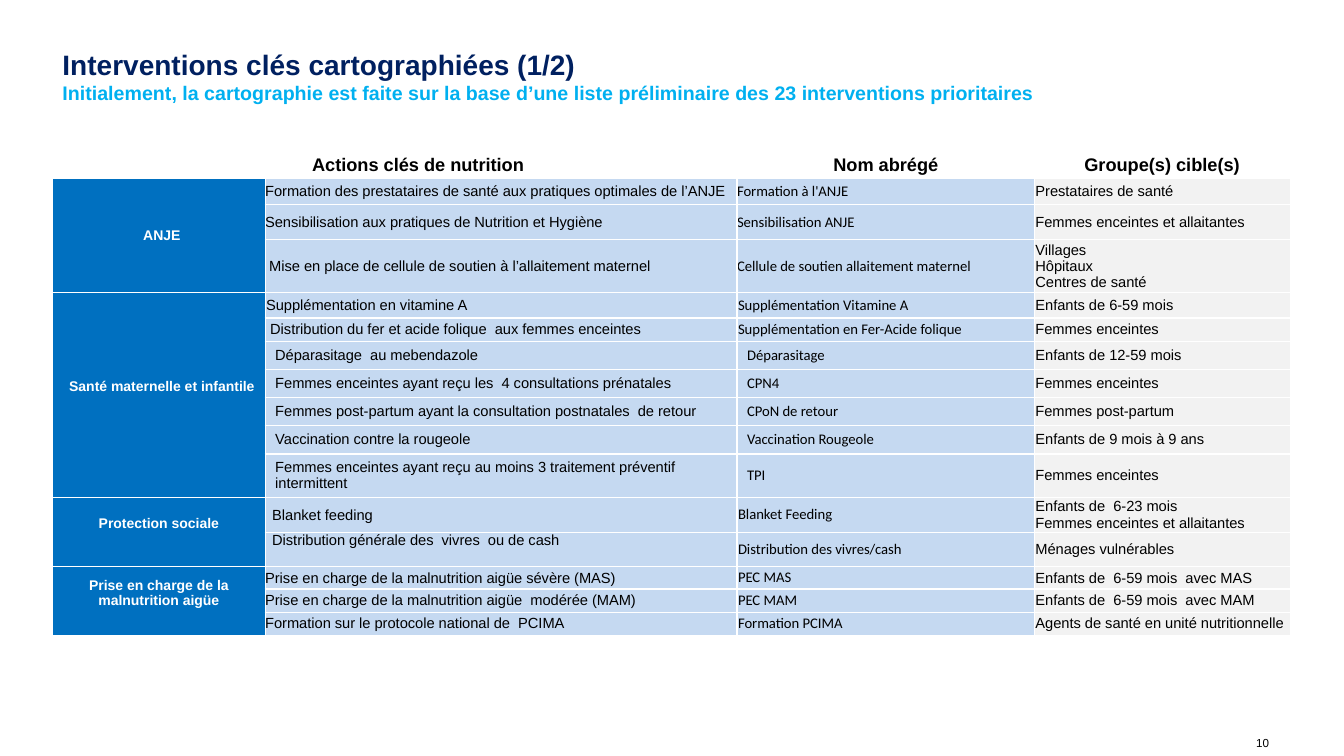
import pptx
import pptx.dml.color
import pptx.enum.text
import pptx.oxml.ns
import pptx.util
import lxml.etree

Inches = pptx.util.Inches
Pt = pptx.util.Pt
ALIGN = pptx.enum.text.PP_ALIGN
ANCHOR = pptx.enum.text.MSO_ANCHOR
COLORS = {
    "title": "002060", "subtitle": "00B0F0", "text": "000000", "white": "FFFFFF",
    "group": "0070C0", "action": "C5D9F1", "target": "F2F2F2",
}
COLUMN_WIDTHS = [2.11, 4.68, 2.95, 2.54]
HEADER_HEIGHT = 0.26
HEADERS = [("", 0), ("Actions clés de nutrition", 1.65), ("Nom abrégé", 0), ("Groupe(s) cible(s)", 0.01)]
# Each group: label, left inset, bottom inset, rows of
# (height, action inset, short-name inset, action, short name, target).
GROUPS = [
    ("ANJE", 0.07, 0, [
        (0.26, 0, 0, "Formation des prestataires de santé aux pratiques optimales de l’ANJE",
         "Formation à l'ANJE", "Prestataires de santé"),
        (0.35, 0, 0, "Sensibilisation aux pratiques de Nutrition et Hygiène",
         "Sensibilisation ANJE", "Femmes enceintes et allaitantes"),
        (0.5, 0.04, 0, "Mise en place de cellule de soutien à l’allaitement maternel",
         "Cellule de soutien allaitement maternel", "Villages\nHôpitaux\nCentres de santé"),
    ]),
    ("Santé maternelle et infantile", 0.07, 0.16, [
        (0.25, 0.01, 0.01, "Supplémentation en vitamine A",
         "Supplémentation Vitamine A", "Enfants de 6-59 mois"),
        (0.23, 0.05, 0.01, "Distribution du fer et acide folique  aux femmes enceintes",
         "Supplémentation en Fer-Acide folique", "Femmes enceintes"),
        (0.28, 0.1, 0.1, "Déparasitage  au mebendazole", "Déparasitage", "Enfants de 12-59 mois"),
        (0.28, 0.1, 0.1, "Femmes enceintes ayant reçu les  4 consultations prénatales",
         "CPN4", "Femmes enceintes"),
        (0.28, 0.1, 0.1, "Femmes post-partum ayant la consultation postnatales  de retour",
         "CPoN de retour", "Femmes post-partum"),
        (0.28, 0.1, 0.1, "Vaccination contre la rougeole",
         "Vaccination Rougeole", "Enfants de 9 mois à 9 ans"),
        (0.43, 0.1, 0.1, "Femmes enceintes ayant reçu au moins 3 traitement préventif intermittent",
         "TPI", "Femmes enceintes"),
    ]),
    ("Protection sociale", 0.01, 0.16, [
        (0.35, 0.07, 0.01, "Blanket feeding", "Blanket Feeding",
         "Enfants de  6-23 mois\nFemmes enceintes et allaitantes"),
        (0.34, 0.07, 0.01, "Distribution générale des  vivres  ou de cash",
         "Distribution des vivres/cash", "Ménages vulnérables"),
    ]),
    ("Prise en charge de la malnutrition aigüe", 0.01, 0.16, [
        (0.22, 0, 0.01, "Prise en charge de la malnutrition aigüe sévère (MAS)",
         "PEC MAS", "Enfants de  6-59 mois  avec MAS"),
        (0.23, 0, 0.01, "Prise en charge de la malnutrition aigüe  modérée (MAM)",
         "PEC MAM", "Enfants de  6-59 mois  avec MAM"),
        (0.23, 0, 0.01, "Formation sur le protocole national de  PCIMA",
         "Formation PCIMA", "Agents de santé en unité nutritionnelle"),
    ]),
]
TOP_ALIGNED = "Distribution générale des  vivres  ou de cash"


def rgb(name):
    """Return the named colour."""
    return pptx.dml.color.RGBColor.from_string(COLORS[name])


def style(span, size, color="text", bold=False, font="Arial"):
    """Set the font of one run."""
    span.font.name = font
    span.font.size = Pt(size)
    span.font.bold = bold
    span.font.color.rgb = rgb(color)


def add_text(page, box, text, looks, anchor, inset=0, wrap=True):
    """Add a text box whose successive runs take the given looks."""
    frame = page.shapes.add_textbox(*map(Inches, box)).text_frame
    frame.word_wrap = wrap
    frame.vertical_anchor = anchor
    frame.margin_left = frame.margin_right = 0
    frame.margin_top = frame.margin_bottom = Inches(inset)
    frame.text = text
    for span, look in zip(frame.paragraphs[0].runs, looks):
        style(span, *look)


def add_borders(cell):
    """Draw thin white lines on the four sides of a cell."""
    properties = cell._tc.get_or_add_tcPr()
    for index, side in enumerate(("lnL", "lnR", "lnT", "lnB")):
        line = lxml.etree.Element(pptx.oxml.ns.qn("a:" + side), w=str(Pt(1)))
        fill = lxml.etree.SubElement(line, pptx.oxml.ns.qn("a:solidFill"))
        lxml.etree.SubElement(fill, pptx.oxml.ns.qn("a:srgbClr"), val=COLORS["white"])
        properties.insert(index, line)


def fill_cell(cell, text, look, fill=None, left=0.01, right=0.01, bottom=0, align=ALIGN.LEFT):
    """Write and format one table cell."""
    cell.text = text
    cell.vertical_anchor = ANCHOR.TOP if text == TOP_ALIGNED else ANCHOR.MIDDLE
    cell.margin_left, cell.margin_right = Inches(left), Inches(right)
    cell.margin_top, cell.margin_bottom = 0, Inches(bottom)
    for para in cell.text_frame.paragraphs:
        para.alignment = align
        for span in para.runs:
            style(span, *look)
        if not text:
            lxml.etree.SubElement(para._p, pptx.oxml.ns.qn("a:endParaRPr"), sz="1000")
    if fill:
        cell.fill.solid()
        cell.fill.fore_color.rgb = rgb(fill)
    else:
        cell.fill.background()
    add_borders(cell)


def add_interventions(page, left, top):
    """Build the table of interventions by group."""
    heights = [HEADER_HEIGHT] + [row[0] for group in GROUPS for row in group[3]]
    table = page.shapes.add_table(
        len(heights), len(COLUMN_WIDTHS), Inches(left), Inches(top),
        Inches(sum(COLUMN_WIDTHS)), Inches(sum(heights))).table
    table.first_row = table.horz_banding = False
    for column, width in zip(table.columns, COLUMN_WIDTHS):
        column.width = Inches(width)
    for row, height in zip(table.rows, heights):
        row.height = Inches(height)
    for column, (text, right) in enumerate(HEADERS):
        fill_cell(table.cell(0, column), text, (13, "text", True), left=0, right=right, align=ALIGN.CENTER)
    first = 1
    for label, inset, bottom, rows in GROUPS:
        for offset, (_, action_inset, name_inset, action, name, target) in enumerate(rows):
            row = first + offset
            fill_cell(table.cell(row, 0), "" if offset else label, (10, "white", True),
                      "group", inset, bottom=0 if offset else bottom, align=ALIGN.CENTER)
            fill_cell(table.cell(row, 1), action, (10.5,), "action", action_inset)
            fill_cell(table.cell(row, 2), name, (10.5, "text", False, "Calibri"), "action", name_inset)
            fill_cell(table.cell(row, 3), target, (10.5,), "target")
        table.cell(first, 0).merge(table.cell(first + len(rows) - 1, 0))
        first += len(rows)


def main():
    """Build and save the slide."""
    deck = pptx.Presentation()
    deck.slide_width, deck.slide_height = Inches(13.33), Inches(7.5)
    page = deck.slides.add_slide(deck.slide_layouts[6])
    add_text(page, (0.62, 0.18, 12.1, 0.91),
             "Interventions clés cartographiées (1/2)\vInitialement, la cartographie est faite "
             "sur la base d’une liste préliminaire des 23 interventions prioritaires",
             [(20, "title", True), (14, "subtitle", True)], ANCHOR.BOTTOM, 0.05)
    add_interventions(page, 0.52, 1.51)
    add_text(page, (12.46, 7.3, 0.26, 0.14), "10", [(8.3,)], ANCHOR.TOP, wrap=False)
    deck.save("out.pptx")


if __name__ == "__main__":
    main()
